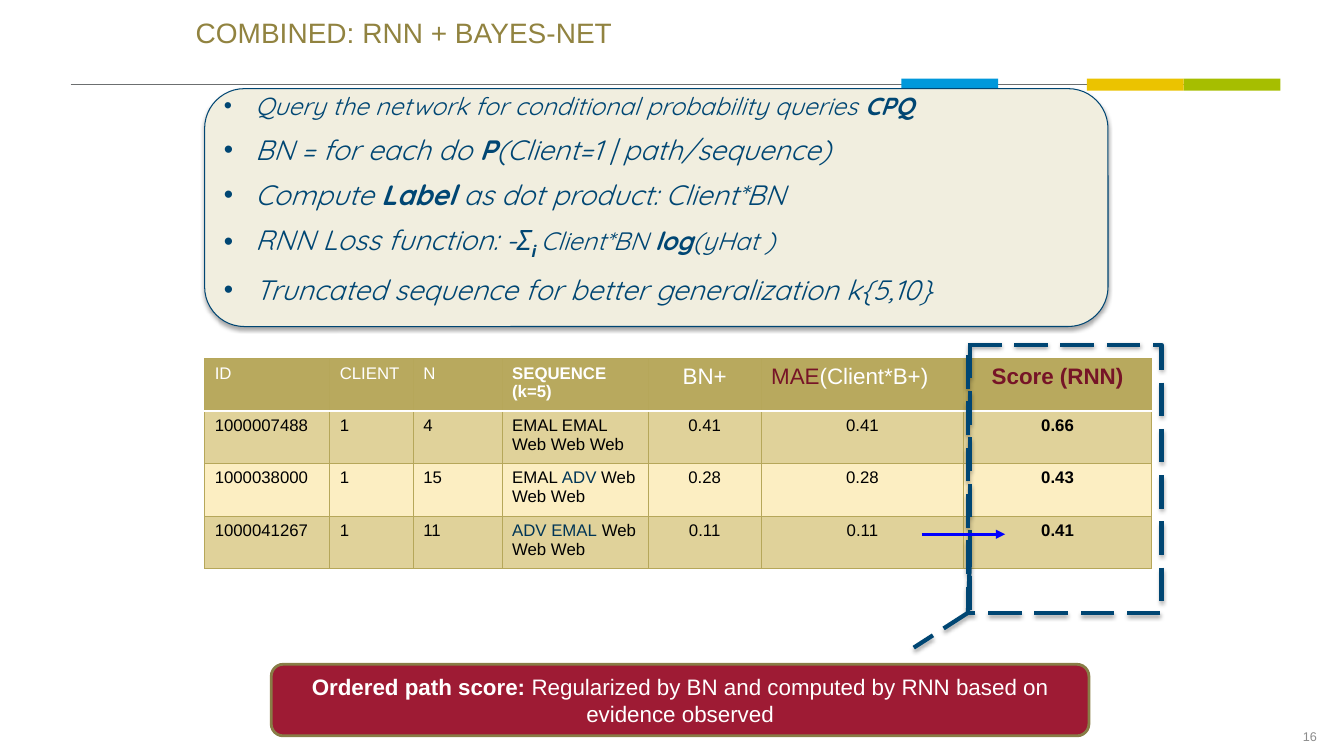
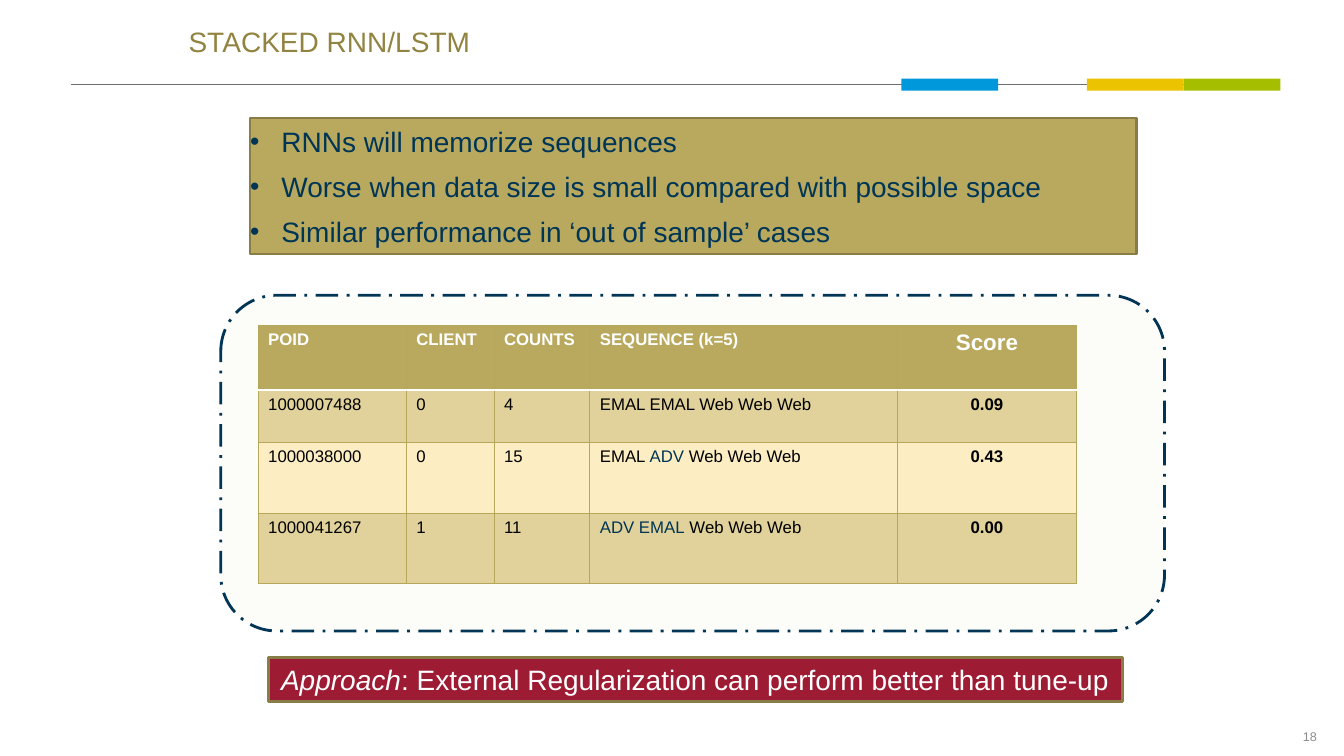
"""Builds two slides on combining recurrent networks with a Bayes net."""
from lxml import etree
from pptx import Presentation
from pptx.dml.color import RGBColor
from pptx.enum import dml, shapes, text
from pptx.oxml import parse_xml
from pptx.oxml.ns import nsdecls, qn
from pptx.util import Inches, Pt

WHITE = RGBColor(0xFF, 0xFF, 0xFF)
BLACK = RGBColor(0, 0, 0)
GRAY = RGBColor(0x8C, 0x8C, 0x8C)
RULE = RGBColor(0x6C, 0x6F, 0x70)
GREEN = RGBColor(0xA6, 0xBE, 0x00)
YELLOW = RGBColor(0xEB, 0xC3, 0x00)
SKY = RGBColor(0x00, 0x98, 0xDB)
BLUE = RGBColor(0x00, 0x46, 0x73)
NAVY = RGBColor(0x00, 0x35, 0x56)
ARROW = RGBColor(0x00, 0x00, 0xFF)
OLIVE = RGBColor(0x91, 0x83, 0x40)
OLIVE_EDGE = RGBColor(0x88, 0x7D, 0x46)
GOLD = RGBColor(0xB8, 0xA9, 0x5E)
GRID = RGBColor(0xB6, 0xA7, 0x5A)
BAND = RGBColor(0xE0, 0xD2, 0x9A)
PALE = RGBColor(0xFC, 0xEE, 0xC2)
CREAM = RGBColor(0xF1, 0xEE, 0xDF)
IVORY = RGBColor(0xFC, 0xFC, 0xF9)
RED = RGBColor(0x9E, 0x1B, 0x34)
MAROON = RGBColor(0x76, 0x14, 0x27)

SHAPE = shapes.MSO_SHAPE
LEFT, CENTER, RIGHT = text.PP_ALIGN.LEFT, text.PP_ALIGN.CENTER, text.PP_ALIGN.RIGHT
BOLD = {"bold": True}
ADV = {"color": NAVY}
SEQUENCES = [
    ["EMAL EMAL Web Web Web"],
    ["EMAL ", ("ADV ", ADV), "Web Web Web"],
    [("ADV EMAL", ADV), " Web Web Web"],
]
IDS = ["1000007488", "1000038000", "1000041267"]
COUNTS = ["4", "15", "11"]

COMBINED = {
    "number": "16",
    "title": ("COMBINED: RNN + BAYES-NET", 1.94, 0.17),
    "body": (2.22, 0.9, 8.66, 2.1),
    "body_style": {"font": "Quicksand", "italic": True, "color": BLUE},
    "bullets": [
        [("Query the network for conditional probability queries ", {"size": 17.6}),
         ("CPQ", {"size": 17.6, "bold": True})],
        ["BN = for each do ", ("P", BOLD), "(Client=1 | path/sequence)"],
        ["Compute ", ("Label", BOLD), " as dot product: Client*BN"],
        ["RNN Loss function: -", ("Σ", {"font": "Noto Sans"}),
         ("i ", {"font": "Noto Sans", "bold": True, "base": -25}),
         ("Client*BN ", {"size": 18}), ("log", {"size": 18, "bold": True}),
         ("(yHat )", {"size": 18})],
        ["Truncated sequence for better generalization k{5,10}"],
    ],
    "table_at": (2.03, 3.56),
    "row_heights": [0.52] * 4,
    "columns": [
        (["ID"], 1.24, LEFT, LEFT),
        (["CLIENT"], 0.83, LEFT, LEFT),
        (["N"], 0.88, LEFT, LEFT),
        ([("SEQUENCE (k=5)", BOLD)], 1.45, LEFT, LEFT),
        ([("BN+", {"size": 16})], 1.12, CENTER, CENTER),
        ([("MAE", {"size": 16, "color": MAROON}), ("(Client*B+)", {"size": 16})],
         2.01, LEFT, CENTER),
        ([("Score (RNN)", {"size": 16, "color": MAROON, "bold": True})],
         1.86, CENTER, CENTER),
    ],
    "values": [IDS, ["1"] * 3, COUNTS, SEQUENCES, ["0.41", "0.28", "0.11"],
               ["0.41", "0.28", "0.11"], ["0.66", "0.43", "0.41"]],
    "banner": (SHAPE.ROUNDED_RECTANGLE, (2.69, 6.59, 8.11, 0.71), 16, [
        ("Ordered path score: ", BOLD),
        "Regularized by BN and computed by RNN based on evidence observed"]),
}
STACKED = {
    "number": "18",
    "title": ("STACKED RNN/LSTM", 1.87, 0.26),
    "body": (2.48, 1.17, 8.79, 1.35),
    "body_style": {"color": NAVY},
    "bullets": [
        ["RNNs will memorize sequences"],
        ["Worse when data size is small compared with possible space"],
        ["Similar performance in ‘out of sample’ cases"],
    ],
    "table_at": (2.56, 3.23),
    "row_heights": [0.64, 0.52, 0.7, 0.7],
    "columns": [
        ([("POID", BOLD)], 1.47, LEFT, LEFT),
        ([("CLIENT", BOLD)], 0.87, LEFT, LEFT),
        ([("COUNTS", BOLD)], 0.95, LEFT, LEFT),
        ([("SEQUENCE (k=5)", BOLD)], 3.05, LEFT, LEFT),
        ([("Score", {"size": 16, "bold": True})], 1.78, CENTER, CENTER),
    ],
    "values": [IDS, ["0", "0", "1"], COUNTS, SEQUENCES, ["0.09", "0.43", "0.00"]],
    "banner": (SHAPE.RECTANGLE, (2.66, 6.52, 8.47, 0.44), 20, [
        ("Approach", {"italic": True}),
        ": External Regularization can perform better than tune-up"]),
}


def box(*lengths):
    return [Inches(v) for v in lengths]


def write(p, runs, align=LEFT, **defaults):
    p.alignment = align
    for item in runs:
        words, own = (item, {}) if isinstance(item, str) else item
        style = {"font": "Arial", "size": 20, "color": BLACK, **defaults, **own}
        r = p.add_run()
        r.text = words
        r.font.name = style["font"]
        r.font.size = Pt(style["size"])
        r.font.color.rgb = style["color"]
        r.font.bold = style.get("bold", False)
        r.font.italic = style.get("italic", False)
        if "base" in style:
            r.font._element.set("baseline", str(style["base"] * 1000))


def paint(sp, fill=None, line=None, width=0, dash=None):
    if fill is None:
        sp.fill.background()
    else:
        sp.fill.solid()
        sp.fill.fore_color.rgb = fill
    if line is None:
        sp.line.fill.background()
    else:
        sp.line.color.rgb = line
        sp.line.width = Pt(width)
        sp.line.dash_style = dash


def add_shape(s, kind, at, **look):
    sp = s.shapes.add_shape(kind, *box(*at))
    sp.shadow.inherit = False
    paint(sp, **look)
    return sp


def add_line(s, x1, x2, y, color, width):
    cn = s.shapes.add_connector(shapes.MSO_CONNECTOR.STRAIGHT, *box(x1, y, x2, y))
    cn.line.color.rgb = color
    cn.line.width = Pt(width)
    etree.SubElement(cn.element.spPr, qn("a:effectLst"))
    return cn


def drop_shadow(sp):
    sp.element.spPr.find(qn("a:effectLst")).append(parse_xml(
        f'<a:outerShdw {nsdecls("a")} blurRad="39400" dist="22900" dir="5400000" '
        'rotWithShape="0"><a:srgbClr val="000000"><a:alpha val="35000"/>'
        '</a:srgbClr></a:outerShdw>'))


def decorate_layout(s):
    parts = [add_line(s, 0.7, 12.67, 0.84, RULE, 1)]
    for x, color in [(11.74, GREEN), (10.78, YELLOW), (8.94, SKY)]:
        parts.append(add_shape(s, SHAPE.RECTANGLE, (x, 0.78, 0.96, 0.12), fill=color))
    for part in parts:
        s.slide_layout.shapes.element.append(part.element)


def place(sp, at, anchor):
    sp.left, sp.top, sp.width, sp.height = box(*at)
    tf = sp.text_frame
    tf.margin_left = tf.margin_right = tf.margin_top = tf.margin_bottom = 0
    tf.word_wrap = True
    tf.auto_size = text.MSO_AUTO_SIZE.NONE
    tf.vertical_anchor = anchor
    return tf


def add_bullets(tf, bullets, style):
    for i, runs in enumerate(bullets):
        p = tf.add_paragraph() if i else tf.paragraphs[0]
        write(p, runs, **style)
        p.line_spacing = 1.01
        p.space_before, p.space_after = Pt(7.1), Pt(0.9)
        pPr = p._p.get_or_add_pPr()
        pPr.set("marL", str(Inches(0.31)))
        pPr.set("indent", str(Inches(-0.31)))
        for tag, key, value in [("buSzPct", "val", "95000"),
                                ("buFont", "typeface", "Arial"),
                                ("buChar", "char", "•")]:
            etree.SubElement(pPr, qn("a:" + tag)).set(key, value)


def format_cell(cell, fill, row):
    tcPr = cell._tc.get_or_add_tcPr()
    white_side = {0: "lnB", 1: "lnT"}.get(row)
    for side in ("lnL", "lnR", "lnT", "lnB"):
        color, width = (WHITE, 2) if side == white_side else (GRID, 0.75)
        tcPr.append(parse_xml(
            f'<a:{side} {nsdecls("a")} w="{Pt(width)}"><a:solidFill>'
            f'<a:srgbClr val="{color}"/></a:solidFill></a:{side}>'))
    cell.fill.solid()
    cell.fill.fore_color.rgb = fill


def add_scores(s, data):
    columns, heights = data["columns"], data["row_heights"]
    size = sum(c[1] for c in columns), sum(heights)
    table = s.shapes.add_table(len(heights), len(columns),
                               *box(*data["table_at"], *size)).table
    table.horz_banding = False
    for row, height in enumerate(heights):
        table.rows[row].height = Inches(height)
    for col, (header, width, head_align, align) in enumerate(columns):
        table.columns[col].width = Inches(width)
        for row, runs in enumerate([header] + data["values"][col]):
            cell = table.cell(row, col)
            format_cell(cell, GOLD if row == 0 else BAND if row % 2 else PALE, row)
            p = cell.text_frame.paragraphs[0]
            if row == 0:
                write(p, runs, head_align, size=12, color=WHITE)
            else:
                runs = [runs] if isinstance(runs, str) else runs
                write(p, runs, align, size=12, bold=col == len(columns) - 1)


def add_slide(prs, data):
    s = prs.slides.add_slide(prs.slide_layouts[0])
    title, x, y = data["title"]
    tf = place(s.shapes.title, (x, y, 8.5, 0.33), text.MSO_ANCHOR.TOP)
    write(tf.paragraphs[0], [title], color=OLIVE)
    tf.paragraphs[0].line_spacing = 0.97
    body = s.placeholders[1]
    tf = place(body, data["body"], text.MSO_ANCHOR.TOP)
    add_bullets(tf, data["bullets"], data["body_style"])
    number = s.shapes.add_textbox(*box(10.16, 7.16, 3, 0.3))
    number.text_frame.word_wrap = True
    number.text_frame.vertical_anchor = text.MSO_ANCHOR.MIDDLE
    write(number.text_frame.paragraphs[0], [data["number"]], RIGHT, size=9, color=GRAY)
    return s, body


def add_banner(s, data):
    kind, at, size, runs = data["banner"]
    sp = add_shape(s, kind, at, fill=RED, line=OLIVE_EDGE, width=2)
    sp.text_frame.word_wrap = True
    write(sp.text_frame.paragraphs[0], runs, CENTER, size=size, color=WHITE)


def build_combined(prs):
    s, body = add_slide(prs, COMBINED)
    decorate_layout(s)
    panel = add_shape(s, SHAPE.ROUNDED_RECTANGLE, (2.03, 0.88, 8.96, 2.36),
                      fill=CREAM, line=BLUE, width=0.75)
    drop_shadow(panel)
    body.element.addprevious(panel.element)
    add_scores(s, COMBINED)
    callout = add_shape(s, SHAPE.LINE_CALLOUT_2_BORDER_AND_ACCENT_BAR,
                        (9.6, 3.42, 1.92, 2.66), line=BLUE, width=3,
                        dash=dml.MSO_LINE.LONG_DASH)
    for i, value in enumerate([0.81, 0.01, 1, 0, 1.13, -0.28]):
        callout.adjustments[i] = value
    drop_shadow(callout)
    add_banner(s, COMBINED)
    arrow = add_line(s, 9.14, 9.97, 5.3, ARROW, 2.25)
    etree.SubElement(arrow.line._get_or_add_ln(), qn("a:tailEnd")).set("type", "triangle")


def build_stacked(prs):
    s, body = add_slide(prs, STACKED)
    paint(body, fill=GOLD, line=OLIVE_EDGE, width=2)
    body.text_frame.vertical_anchor = text.MSO_ANCHOR.MIDDLE
    add_shape(s, SHAPE.FLOWCHART_ALTERNATE_PROCESS, (2.19, 2.93, 9.36, 3.33),
              fill=IVORY, line=NAVY, width=2, dash=dml.MSO_LINE.LONG_DASH_DOT)
    add_scores(s, STACKED)
    add_banner(s, STACKED)


def main():
    prs = Presentation()
    prs.slide_width, prs.slide_height = box(13.33, 7.5)
    build_combined(prs)
    build_stacked(prs)
    prs.save("out.pptx")


if __name__ == "__main__":
    main()
